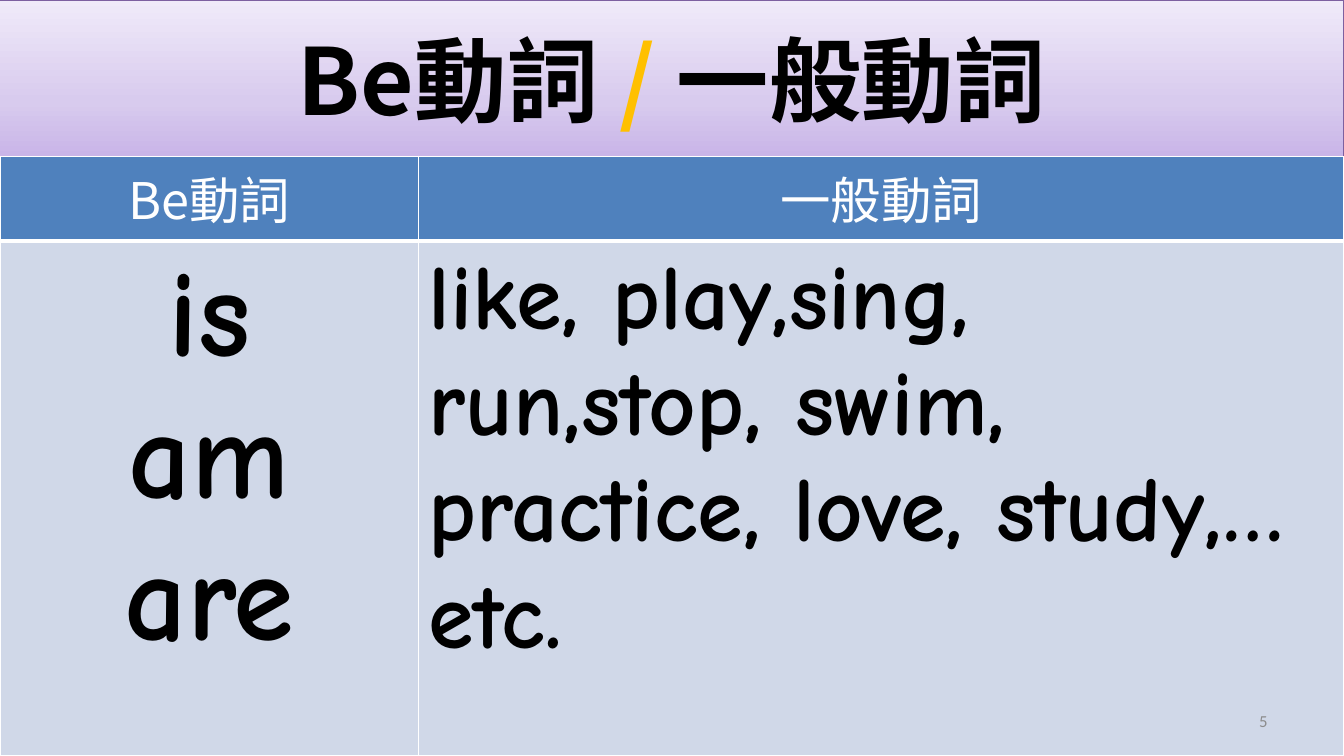
from dataclasses import dataclass

from lxml import etree
from pptx import Presentation
from pptx.dml.color import RGBColor
from pptx.enum.shapes import MSO_SHAPE
from pptx.enum.text import MSO_ANCHOR, PP_ALIGN
from pptx.oxml import parse_xml
from pptx.oxml.ns import qn
from pptx.util import Inches, Pt

LEFT, CENTER, RIGHT = PP_ALIGN.LEFT, PP_ALIGN.CENTER, PP_ALIGN.RIGHT
MIDDLE = MSO_ANCHOR.MIDDLE
RECTANGLE = MSO_SHAPE.RECTANGLE

COLORS = {
    "black": "000000",
    "white": "FFFFFF",
    "slash": "FFC000",
    "title_line": "7D60A0",
    "header": "4F81BD",
    "body": "D0D8E8",
    "number": "8C8C8C",
}
TITLE_GRADIENT = [(0, "C9B5E8"), (35, "D8CBEE"), (100, "F0EAF9")]
NAMESPACE = 'xmlns:a="http://schemas.openxmlformats.org/drawingml/2006/main"'
CJK_FONT, COMIC_FONT, NUMBER_FONT = "Noto Sans CJK JP", "Comic Neue", "Calibri"
SLIDE_WIDTH, SLIDE_HEIGHT = 13.33, 7.5
TITLE_HEIGHT = 1.55
HEADER_HEIGHT = 0.84
BE_WIDTH = 4.15


@dataclass
class VerbColumn:
    heading: str
    verbs: list[str]
    width: float
    size: int
    align: PP_ALIGN


VERB_COLUMNS = [
    VerbColumn("Be動詞", ["is", "am", "are"], BE_WIDTH, 88, CENTER),
    VerbColumn(
        "一般動詞",
        ["like, play,sing, run,stop, swim,", "practice, love, study,…etc."],
        SLIDE_WIDTH - BE_WIDTH, 66, LEFT,
    ),
]


def color(name: str) -> RGBColor:
    return RGBColor.from_string(COLORS[name])


def add_text(paragraph, text: str, *, size: int, font: str, fill: str = "black",
             bold: bool = False, align: PP_ALIGN = CENTER) -> None:
    paragraph.alignment = align
    run = paragraph.add_run()
    run.text = text
    run.font.name = font
    run.font.size = Pt(size)
    run.font.bold = bold
    run.font.color.rgb = color(fill)
    east_asian = etree.SubElement(run.font._element, qn("a:ea"))
    east_asian.set("typeface", font)


def style_title(shape) -> None:
    shape.fill.gradient()
    shape.fill.gradient_angle = 90
    stops = "".join(
        f'<a:gs pos="{position * 1000}"><a:srgbClr val="{value}"/></a:gs>'
        for position, value in TITLE_GRADIENT
    )
    properties = shape._element.spPr
    gradient = properties.find(qn("a:gradFill"))
    gradient.replace(gradient.find(qn("a:gsLst")),
                     parse_xml(f"<a:gsLst {NAMESPACE}>{stops}</a:gsLst>"))
    gradient.find(qn("a:lin")).set("ang", "16200000")
    shape.line.color.rgb = color("title_line")
    shape.line.width = Pt(0.75)
    shape.shadow.inherit = False
    properties.find(qn("a:effectLst")).append(parse_xml(
        f'<a:outerShdw {NAMESPACE} blurRad="{Pt(3.1)}" dist="{Pt(1.6)}" dir="5400000" '
        f'rotWithShape="0"><a:srgbClr val="{COLORS["black"]}"><a:alpha val="38000"/>'
        "</a:srgbClr></a:outerShdw>"))


def add_title(slide) -> None:
    shape = slide.shapes.add_shape(RECTANGLE, 0, 0, Inches(SLIDE_WIDTH), Inches(TITLE_HEIGHT))
    style_title(shape)
    shape.text_frame.word_wrap = True
    shape.text_frame.vertical_anchor = MIDDLE
    paragraph = shape.text_frame.paragraphs[0]
    for text, fill in [("Be動詞 ", "black"), ("/ ", "slash"), ("一般動詞", "black")]:
        add_text(paragraph, text, size=66, font=CJK_FONT, fill=fill, bold=True)


def style_cell(cell, fill: str, top: float, bottom: float) -> None:
    cell.fill.solid()
    cell.fill.fore_color.rgb = color(fill)
    properties = cell._tc.get_or_add_tcPr()
    borders = [("lnL", 1), ("lnR", 1), ("lnT", top), ("lnB", bottom)]
    for index, (tag, width) in enumerate(borders):
        properties.insert(index, parse_xml(
            f'<a:{tag} {NAMESPACE} w="{Pt(width)}"><a:solidFill>'
            f'<a:srgbClr val="{COLORS["white"]}"/></a:solidFill></a:{tag}>'))


def add_verb_table(slide) -> None:
    height = SLIDE_HEIGHT - TITLE_HEIGHT
    table = slide.shapes.add_table(
        2, len(VERB_COLUMNS), 0, Inches(TITLE_HEIGHT), Inches(SLIDE_WIDTH), Inches(height)).table
    table.rows[0].height = Inches(HEADER_HEIGHT)
    table.rows[1].height = Inches(height - HEADER_HEIGHT)
    for index, column in enumerate(VERB_COLUMNS):
        table.columns[index].width = Inches(column.width)
        heading, body = table.cell(0, index), table.cell(1, index)
        style_cell(heading, "header", top=1, bottom=3)
        style_cell(body, "body", top=3, bottom=1)
        add_text(heading.text_frame.paragraphs[0], column.heading,
                 size=36, font=CJK_FONT, fill="white")
        for line, verbs in enumerate(column.verbs):
            frame = body.text_frame
            paragraph = frame.add_paragraph() if line else frame.paragraphs[0]
            add_text(paragraph, verbs, size=column.size, font=COMIC_FONT,
                     bold=True, align=column.align)


def add_slide_number(slide) -> None:
    frame = slide.shapes.add_textbox(
        Inches(9.56), Inches(6.95), Inches(3.11), Inches(0.4)).text_frame
    frame.word_wrap = True
    frame.vertical_anchor = MIDDLE
    add_text(frame.paragraphs[0], "5", size=12, font=NUMBER_FONT, fill="number", align=RIGHT)


def main() -> None:
    presentation = Presentation()
    presentation.slide_width = Inches(SLIDE_WIDTH)
    presentation.slide_height = Inches(SLIDE_HEIGHT)
    slide = presentation.slides.add_slide(presentation.slide_layouts[6])
    add_title(slide)
    add_verb_table(slide)
    add_slide_number(slide)
    presentation.save("out.pptx")


if __name__ == "__main__":
    main()
